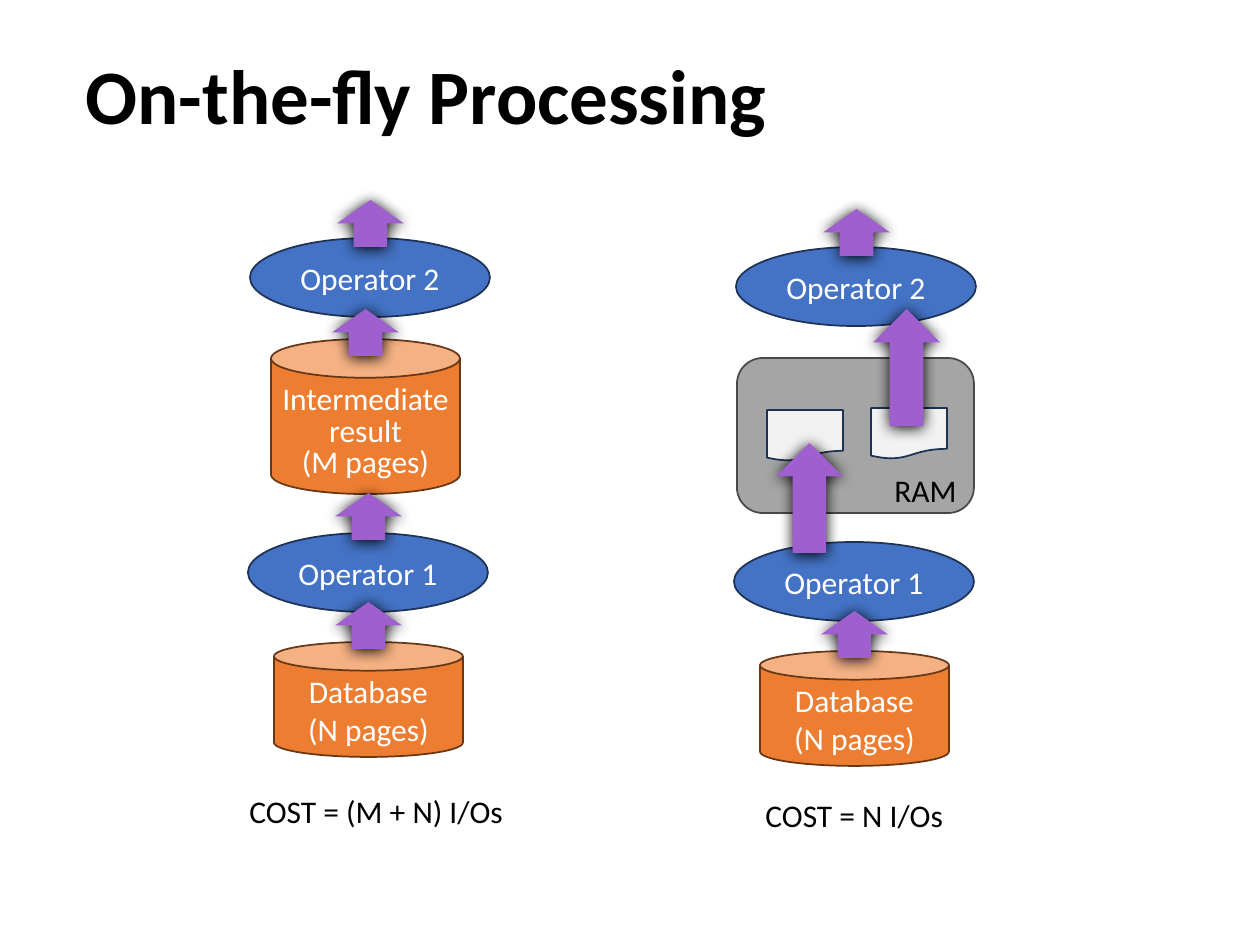
from lxml.etree import SubElement
from pptx import Presentation
from pptx.dml.color import RGBColor
from pptx.enum.shapes import MSO_SHAPE as Shape
from pptx.enum.text import MSO_ANCHOR as Anchor, MSO_AUTO_SIZE as AutoSize, PP_ALIGN as Align
from pptx.oxml.ns import qn
from pptx.util import Pt

EMU_PER_PX = 914400 / 126
FONT = "Calibri"
COLORS = {
    "black": "000000", "white": "FFFFFF",
    "operator": "4472C4", "operator_line": "1E3256",
    "storage": "ED7D31", "storage_line": "683715",
    "memory": "A5A5A5", "memory_line": "484848",
    "sheet": "F2F2F2", "arrow": "9F5FCF",
}


def px(*values):
    return [round(value * EMU_PER_PX) for value in values]


def color(name):
    return RGBColor.from_string(COLORS[name])


def write(frame, lines, ink, size=18, bold=False, align=Align.LEFT, spacing=None):
    """Fill a text frame with one paragraph per line."""
    for index, line in enumerate(lines):
        para = frame.add_paragraph() if index else frame.paragraphs[0]
        para.alignment = align
        if spacing:
            para.line_spacing = Pt(spacing)
        span = para.add_run()
        span.text = line
        span.font.name = FONT
        span.font.size = Pt(size)
        span.font.bold = bold
        span.font.color.rgb = color(ink)


def add_block(shapes, kind, box, fill, line=None):
    block = shapes.add_shape(kind, *px(*box))
    block.shadow.inherit = False
    block.fill.solid()
    block.fill.fore_color.rgb = color(fill)
    if line:
        block.line.color.rgb = color(line)
        block.line.width = Pt(1)
    else:
        block.line.fill.background()
    return block


def add_operator(shapes, x, y, label):
    oval = add_block(shapes, Shape.OVAL, (x, y, 240, 79), "operator", "operator_line")
    oval.text_frame.vertical_anchor = Anchor.MIDDLE
    write(oval.text_frame, [label], "white", align=Align.CENTER)


def add_storage(shapes, x, y, height, lines, insets, spacing=None):
    can = add_block(shapes, Shape.CAN, (x, y, 189, height), "storage", "storage_line")
    frame = can.text_frame
    frame.word_wrap = True
    frame.vertical_anchor = Anchor.MIDDLE
    (frame.margin_left, frame.margin_top,
     frame.margin_right, frame.margin_bottom) = px(*insets)
    write(frame, lines, "white", align=Align.CENTER, spacing=spacing)


def add_arrow(shapes, x, y, height=47):
    arrow = add_block(shapes, Shape.UP_ARROW, (x, y, 67, height), "arrow")
    effects = arrow._element.spPr.find(qn("a:effectLst"))
    shadow = SubElement(effects, qn("a:outerShdw"), blurRad=str(Pt(8.5)),
                        dist=str(Pt(1)), dir="5400000", rotWithShape="0")
    SubElement(shadow, qn("a:srgbClr"), val=COLORS["black"])


def add_label(shapes, box, text):
    label = shapes.add_textbox(*px(*box))
    label.text_frame.word_wrap = False
    label.text_frame.auto_size = AutoSize.SHAPE_TO_FIT_TEXT
    write(label.text_frame, [text], "black")


def add_pipeline(shapes, dx=0, dy=0):
    """Draw the database, both operators and the arrows shared by the two plans."""
    add_operator(shapes, 248 + dx, 533 + dy, "Operator 1")
    add_operator(shapes, 250 + dx, 238 + dy, "Operator 2")
    add_storage(shapes, 274 + dx, 642 + dy, 115, ["Database", "(N pages)"], (13, 6, 13, 0))
    add_arrow(shapes, 335 + dx, 602 + dy)
    add_arrow(shapes, 337 + dx, 200 + dy)


def add_intermediate_result(shapes):
    add_storage(shapes, 271, 339, 155, ["Intermediate result", "(M pages)"],
                (0, 13, 0, 0), spacing=18)
    add_arrow(shapes, 335, 493)
    add_arrow(shapes, 332, 309)


def add_memory(shapes):
    add_block(shapes, Shape.ROUNDED_RECTANGLE, (737, 358, 237, 155), "memory", "memory_line")
    for x, y in ((767, 410), (871, 408)):
        add_block(shapes, Shape.FLOWCHART_DOCUMENT, (x, y, 76, 51), "sheet", "operator_line")
    add_arrow(shapes, 776, 443, 110)
    add_arrow(shapes, 873, 309, 117)
    add_label(shapes, (882, 465, 88, 50), "RAM")


def add_title(page, text):
    title = page.shapes.title
    title.left, title.top, title.width, title.height = px(73, 26, 753, 152)
    title.text_frame.vertical_anchor = Anchor.MIDDLE
    write(title.text_frame, [text], "black", size=44, bold=True, spacing=43)


def main():
    deck = Presentation()
    deck.slide_width, deck.slide_height = px(1260, 945)
    page = deck.slides.add_slide(deck.slide_layouts[5])
    add_title(page, "On-the-fly Processing")

    add_pipeline(page.shapes)
    add_intermediate_result(page.shapes)
    add_label(page.shapes, (237, 786, 282, 50), "COST = (M + N) I/Os")

    on_the_fly = page.shapes.add_group_shape().shapes
    add_pipeline(on_the_fly, dx=486, dy=9)
    add_memory(on_the_fly)
    add_label(page.shapes, (753, 790, 205, 50), "COST = N I/Os")

    deck.save("out.pptx")


if __name__ == "__main__":
    main()
